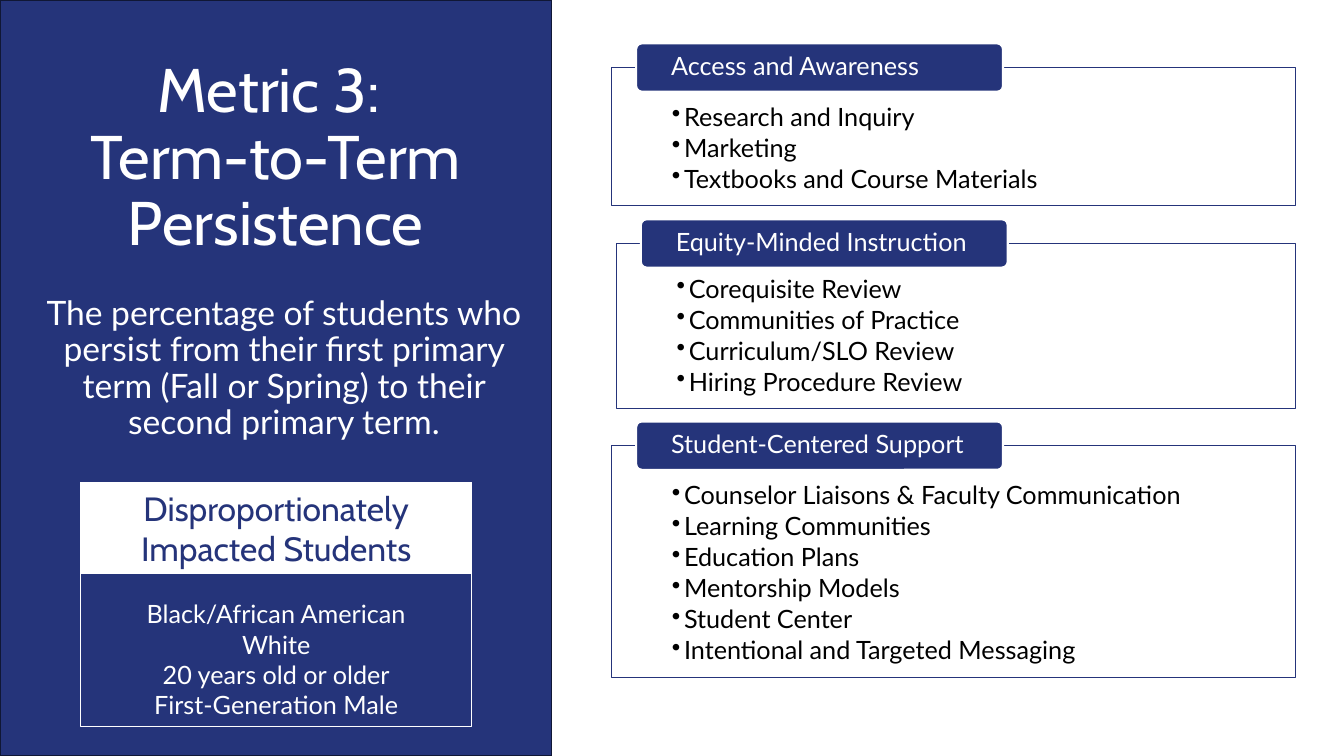
from pptx import Presentation
from pptx.dml.color import RGBColor
from pptx.enum.shapes import MSO_SHAPE
from pptx.enum.text import MSO_ANCHOR, MSO_AUTO_SIZE, PP_ALIGN
from pptx.oxml.ns import qn
from pptx.util import Inches, Pt
from lxml import etree

RECT, ROUND = MSO_SHAPE.RECTANGLE, MSO_SHAPE.ROUNDED_RECTANGLE
TOP, MID, LOW = MSO_ANCHOR.TOP, MSO_ANCHOR.MIDDLE, MSO_ANCHOR.BOTTOM
LEFT, CENTER = PP_ALIGN.LEFT, PP_ALIGN.CENTER
NAVY, DARK, WHITE, BLACK = "25347A", "101735", "FFFFFF", "000000"
HEAD, BODY = "Cabin", "Lato"


def color(code):
    return RGBColor.from_string(code)


class Deck:
    """Holds the slide; lengths are percent of its width and height."""

    def __init__(self):
        self.prs = Presentation()
        self.prs.slide_width, self.prs.slide_height = Inches(13.33), Inches(7.5)
        self.slide = self.prs.slides.add_slide(self.prs.slide_layouts[5])

    def wide(self, share):
        return round(self.prs.slide_width * share / 100)

    def high(self, share):
        return round(self.prs.slide_height * share / 100)

    def area(self, x, y, w, h):
        return self.wide(x), self.high(y), self.wide(w), self.high(h)

    def shape(self, kind, spot, fill, line, weight):
        box = self.slide.shapes.add_shape(kind, *self.area(*spot))
        box.shadow.inherit = False
        if fill:
            box.fill.solid()
            box.fill.fore_color.rgb = color(fill)
        else:
            box.fill.background()
        box.line.color.rgb = color(line)
        box.line.width = Pt(weight)
        return box

    def frame(self, box, anchor=TOP, pad=(0.75, 0.67, 0.75, 0.67)):
        text = box.text_frame
        text.word_wrap = True
        text.auto_size = MSO_AUTO_SIZE.NONE
        text.vertical_anchor = anchor
        text.margin_left, text.margin_right = self.wide(pad[0]), self.wide(pad[2])
        text.margin_top, text.margin_bottom = self.high(pad[1]), self.high(pad[3])
        return text

    def label(self, text, lines, size, font, ink, align=CENTER,
              lead=0.9, after=0, mark=False):
        for line in lines:
            fresh = len(text.paragraphs) == 1 and not text.paragraphs[0].runs
            para = text.paragraphs[0] if fresh else text.add_paragraph()
            if mark:
                self.bullet(para)
            para.alignment = align
            para.line_spacing = lead
            para.space_before, para.space_after = Pt(0), Pt(after)
            for i, part in enumerate(line.split("\n")):
                if i:
                    para.add_line_break()
                run = para.add_run()
                run.text = part
                run.font.size, run.font.name = Pt(size), font
                run.font.color.rgb = color(ink)

    def bullet(self, para):
        para.level = 1
        props = para._p.get_or_add_pPr()
        props.set("marL", str(Inches(0.12)))
        props.set("indent", str(-Inches(0.12)))
        etree.SubElement(props, qn("a:buChar")).set("char", "•")

    def title(self, spot, words):
        box = self.slide.shapes.title
        box.element.getparent().append(box.element)  # in front of the panel
        box.left, box.top, box.width, box.height = self.area(*spot)
        self.label(self.frame(box, LOW), [words], 44, HEAD, WHITE)

    def note(self, spot, words):
        box = self.slide.shapes.add_textbox(*self.area(*spot))
        self.label(self.frame(box), [words], 24, BODY, WHITE)

    def card(self, x, y, w, h, band, name, items):
        self.shape(RECT, (x, y, w, band), WHITE, WHITE, 1)
        text = self.frame(self.shape(RECT, (x, y, w, h), None, WHITE, 0.75))
        self.label(text, [name], 24, HEAD, NAVY, lead=1, after=21.6)
        self.label(text, items, 18, BODY, WHITE, lead=1)

    def group(self, x, y, h, name, items):
        box = self.shape(RECT, (x, y, 96.4 - x, h), WHITE, NAVY, 0.5)
        text = self.frame(box, LOW, (4.5, 4.5, 6.68, 1.6))
        self.label(text, items, 18, BODY, BLACK, LEFT, after=2.7, mark=True)
        tab = self.shape(ROUND, (x + 1.83, y - 3.2, 27.3, 6.4), NAVY, WHITE, 1.5)
        tab.adjustments[0] = 0.12
        text = self.frame(tab, MID, (2.48, 0.27, 2.48, 0.27))
        self.label(text, [name], 18, BODY, WHITE, LEFT)


def main():
    deck = Deck()

    # Left panel with the metric
    deck.shape(RECT, (0, 0, 41.04, 100), NAVY, DARK, 1)
    deck.title((3.2, 5.75, 34.65, 29.2), "Metric 3: \nTerm-to-Term Persistence")
    deck.note((2.7, 38.55, 36.85, 21.85),
              "The percentage of students who persist from their first primary "
              "term (Fall or Spring) to their second primary term.")
    deck.card(6, 63.87, 29.1, 32.25, 12, "Disproportionately Impacted Students",
              ["Black/African American", "White", "20 years old or older",
               "First-Generation Male"])

    # Right side: strategy groups
    groups = [
        (45.5, 8.93, 18.3, "Access and Awareness",
         ["Research and Inquiry", "Marketing", "Textbooks and Course Materials"]),
        (45.85, 32.2, 21.85, "Equity-Minded Instruction",
         ["Corequisite Review", "Communities of Practice",
          "Curriculum/SLO Review", "Hiring Procedure Review"]),
        (45.5, 58.95, 30.65, "Student-Centered Support",
         ["Counselor Liaisons & Faculty Communication", "Learning Communities",
          "Education Plans", "Mentorship Models", "Student Center",
          "Intentional and Targeted Messaging"]),
    ]
    for group in groups:
        deck.group(*group)

    deck.prs.save("out.pptx")


if __name__ == "__main__":
    main()
